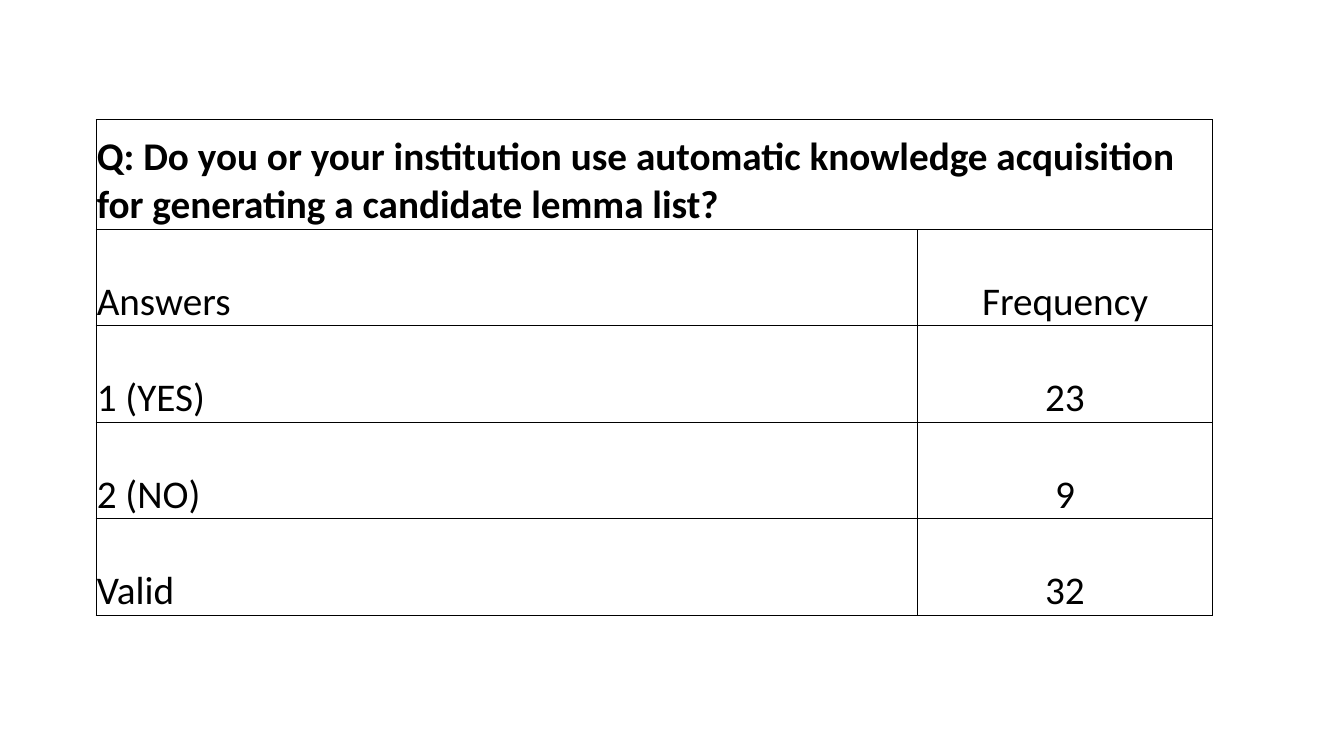
from dataclasses import dataclass

import pptx
import pptx.dml.color
import pptx.enum.text
import pptx.oxml
import pptx.oxml.ns
import pptx.table
import pptx.util
from pptx.util import Cm

ALIGN = pptx.enum.text.PP_ALIGN
INK = "000000"
WIDTHS = (20.7, 7.44)
HEAD, ROW = 2.77, 2.43


@dataclass
class Entry:
    label: str
    value: str


QUERY = ("Q: Do you or your institution use automatic knowledge acquisition "
         "for generating a candidate lemma list?")
ROWS = [
    Entry("Answers", "Frequency"),
    Entry("1 (YES)", "23"),
    Entry("2 (NO)", "9"),
    Entry("Valid", "32"),
]


def color(code: str) -> pptx.dml.color.RGBColor:
    return pptx.dml.color.RGBColor.from_string(code)


def write(cell: pptx.table._Cell, text: str, *, size: float = 28,
          bold: bool = False, align: ALIGN = ALIGN.LEFT) -> None:
    para = cell.text_frame.paragraphs[0]
    para.alignment = align
    run = para.add_run()
    run.text = text
    run.font.name = "Calibri"
    run.font.size = pptx.util.Pt(size)
    run.font.bold = bold
    run.font.color.rgb = color(INK)


def frame(cell: pptx.table._Cell) -> None:
    """Give the cell thin borders, no fill, tight margins and a bottom anchor."""
    props = cell._tc.get_or_add_tcPr()
    space = pptx.oxml.ns.nsdecls("a")
    for side in ("lnL", "lnR", "lnT", "lnB"):
        props.append(pptx.oxml.parse_xml(
            f'<a:{side} {space} w="{pptx.util.Pt(0.5)}"><a:solidFill>'
            f'<a:srgbClr val="{INK}"/></a:solidFill></a:{side}>'))
    cell.fill.background()
    cell.margin_left = cell.margin_right = cell.margin_top = Cm(0.02)
    cell.margin_bottom = 0
    cell.vertical_anchor = pptx.enum.text.MSO_ANCHOR.BOTTOM


def main() -> None:
    deck = pptx.Presentation()
    deck.slide_width, deck.slide_height = Cm(33.87), Cm(19.05)
    slide = deck.slides.add_slide(deck.slide_layouts[6])

    tall = HEAD + ROW * len(ROWS)
    table = slide.shapes.add_table(
        len(ROWS) + 1, len(WIDTHS), Cm(2.42), Cm(3.01),
        Cm(sum(WIDTHS)), Cm(tall)).table
    table.first_row = table.horz_banding = False
    for col, width in zip(table.columns, WIDTHS):
        col.width = Cm(width)
    for num, row in enumerate(table.rows):
        row.height = Cm(ROW if num else HEAD)
    for cell in table.iter_cells():
        frame(cell)

    title = table.cell(0, 0)
    title.merge(table.cell(0, 1))
    write(title, QUERY, bold=True)
    for num, entry in enumerate(ROWS, 1):
        write(table.cell(num, 0), entry.label)
        write(table.cell(num, 1), entry.value, align=ALIGN.CENTER)

    deck.save("out.pptx")


if __name__ == "__main__":
    main()
